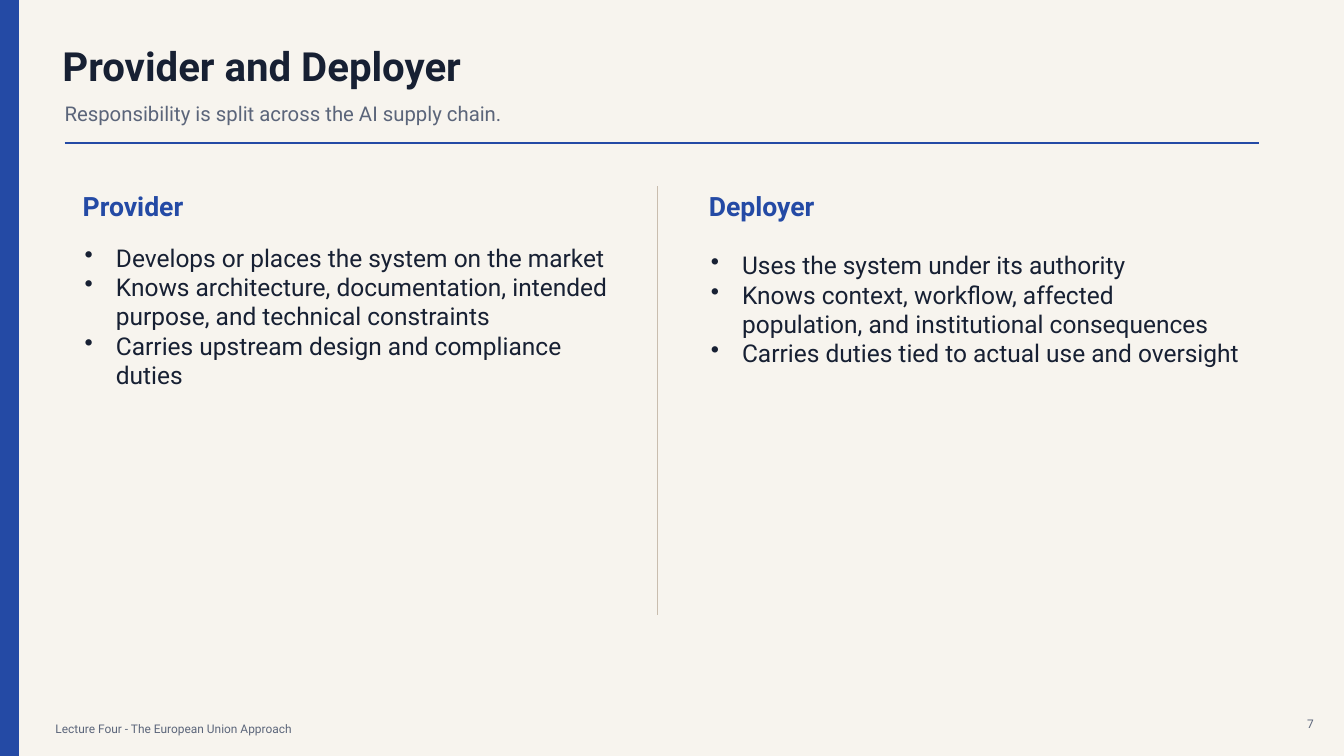
from lxml.etree import SubElement
from pptx import Presentation
from pptx.dml.color import RGBColor
from pptx.enum.shapes import MSO_CONNECTOR, MSO_SHAPE
from pptx.enum.text import MSO_ANCHOR, PP_ALIGN
from pptx.oxml.ns import qn
from pptx.util import Pt

PX = 9144  # EMU per px, 100 px to the inch
WIDE, HIGH = 1333, 750
BLUE, INK, GREY, SAND, PAPER = "244AA5", "172033", "5B657A", "C9BDAE", "F7F4EE"
INDENT = 31

DUTIES = [
    ("Provider", 151, [
        "Develops or places the system on the market",
        "Knows architecture, documentation, intended purpose, and technical constraints",
        "Carries upstream design and compliance duties",
    ]),
    ("Deployer", 137, [
        "Uses the system under its authority",
        "Knows context, workflow, affected population, and institutional consequences",
        "Carries duties tied to actual use and oversight",
    ]),
]


def paint(color, tint):
    color.rgb = RGBColor.from_string(tint)


def add_bullet(para):
    props = para._p.get_or_add_pPr()
    props.set("marL", str(INDENT * PX))
    props.set("indent", str(-INDENT * PX))
    SubElement(props, qn("a:buChar")).set("char", "•")


def add_text(slide, box, lines, size, tint, bold=False, align=PP_ALIGN.LEFT, bullets=False):
    frame = slide.shapes.add_textbox(*(n * PX for n in box)).text_frame
    frame.word_wrap = True
    frame.vertical_anchor = MSO_ANCHOR.MIDDLE
    frame.margin_left = frame.margin_right = frame.margin_top = frame.margin_bottom = 0
    frame.text = "\n".join(lines)
    for para in frame.paragraphs:
        para.alignment = align
        if bullets:
            add_bullet(para)
        font = para.font
        font.name, font.size, font.bold = "Roboto", Pt(size), bold
        paint(font.color, tint)


def add_line(slide, start, end, tint, width):
    ends = (n * PX for n in start + end)
    line = slide.shapes.add_connector(MSO_CONNECTOR.STRAIGHT, *ends)
    line.line.width = Pt(width)
    paint(line.line.color, tint)
    SubElement(line._element.spPr, qn("a:effectLst"))


def add_stripe(slide, box):
    stripe = slide.shapes.add_shape(MSO_SHAPE.RECTANGLE, *(n * PX for n in box))
    stripe.shadow.inherit = False
    stripe.fill.solid()
    paint(stripe.fill.fore_color, BLUE)
    paint(stripe.line.color, BLUE)
    stripe.line.width = Pt(1)


def add_header(slide, left, top, width):
    add_text(slide, (left - 2, top, 980, 45), ["Provider and Deployer"], 28.7, INK, bold=True)
    add_text(slide, (left, top + 53, 1090, 35),
             ["Responsibility is split across the AI supply chain."], 14.5, GREY)
    add_line(slide, (left, top + 100), (left + width, top + 100), BLUE, 1.25)


def add_column(slide, left, top, width, head, depth, items):
    add_text(slide, (left, top, width, 32), [head], 19, BLUE, bold=True)
    add_text(slide, (left + 2, top + 50, width - 10, depth), items, 17.5, INK, bullets=True)


def add_body(slide, left, top, width, step):
    for i, (head, depth, items) in enumerate(DUTIES):
        add_column(slide, left + i * step, top, width, head, depth, items)
    middle = left + 570
    add_line(slide, (middle, top - 3), (middle, top + 422), SAND, 1)


def add_footer(slide, left, right, top):
    add_text(slide, (left, top, 900, 20), ["Lecture Four - The European Union Approach"], 8.5, GREY)
    add_text(slide, (right - 28, top - 5, 28, 20), ["7"], 8.5, GREY, align=PP_ALIGN.RIGHT)


def main():
    deck = Presentation()
    deck.slide_width, deck.slide_height = WIDE * PX, HIGH * PX
    slide = deck.slides.add_slide(deck.slide_layouts[6])
    slide.background.fill.solid()
    paint(slide.background.fill.fore_color, PAPER)
    add_stripe(slide, (0, 0, 18, HIGH))
    add_header(slide, 64, 42, 1185)
    add_body(slide, 82, 188, 535, 621)
    add_footer(slide, 55, 1303, 713)
    deck.save("out.pptx")


if __name__ == "__main__":
    main()
